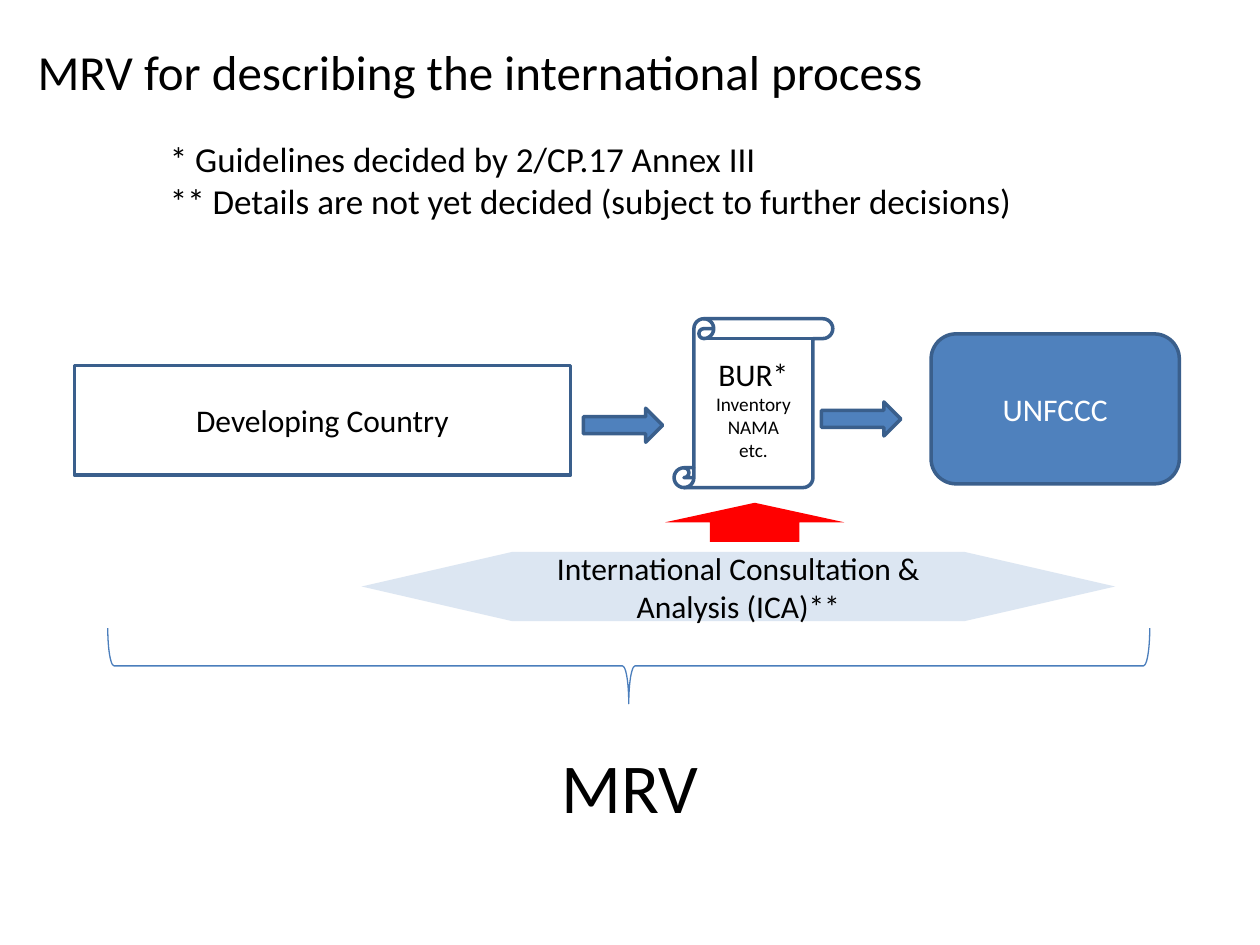
"""Build the slide on MRV in the international process."""
from pptx import Presentation
from pptx.dml.color import RGBColor
from pptx.enum import shapes, text
from pptx.util import Inches, Pt


class Theme:
    font = "Calibri"
    ink, white = "000000", "FFFFFF"
    blue, edge, brace = "4F81BD", "3A5F8C", "4B7EBC"
    pale, red = "DCE6F2", "FF0000"
    small, body, note, title, huge = 11, 18, 20, 28, 40
    thick, thin = 2, 0.75


deck = Presentation()
deck.slide_width, deck.slide_height = Inches(10), Inches(7.5)
col, row = deck.slide_width / 100, deck.slide_height / 75
slide = deck.slides.add_slide(deck.slide_layouts[6])
kind = shapes.MSO_SHAPE
center, left = text.PP_ALIGN.CENTER, text.PP_ALIGN.LEFT


def write(shape, lines, color=Theme.ink, align=center):
    frame = shape.text_frame
    frame.word_wrap = True
    frame.vertical_anchor = text.MSO_ANCHOR.MIDDLE
    for i, (words, size) in enumerate(lines):
        para = frame.add_paragraph() if i else frame.paragraphs[0]
        para.alignment = align
        run = para.add_run()
        run.text = words
        run.font.name, run.font.size = Theme.font, Pt(size)
        run.font.color.rgb = RGBColor.from_string(color)


def draw(form, x, y, wide, high, fill=None, line=None, weight=Theme.thick):
    shape = slide.shapes.add_shape(
        form, round(x * col), round(y * row), round(wide * col), round(high * row))
    shape.shadow.inherit = False
    if fill:
        shape.fill.solid()
        shape.fill.fore_color.rgb = RGBColor.from_string(fill)
    else:
        shape.fill.background()
    if line:
        shape.line.color.rgb = RGBColor.from_string(line)
        shape.line.width = Pt(weight)
    else:
        shape.line.fill.background()
    return shape


nation = draw(kind.RECTANGLE, 5.9, 29, 39.4, 8.7, line=Theme.edge)
write(nation, [("Developing Country", Theme.body)])

unit = draw(kind.ROUNDED_RECTANGLE, 73.9, 26.5, 19.7, 11.9, Theme.blue, Theme.edge)
write(unit, [("UNFCCC", Theme.body)], Theme.white)

scroll = draw(kind.VERTICAL_SCROLL, 53.5, 25.3, 12.6, 13.4, line=Theme.edge)
write(scroll, [("BUR*", Theme.body)]
      + [(item, Theme.small) for item in ("Inventory", "NAMA", "etc.")])

for x, y in ((46.3, 32.4), (65.2, 31.9)):
    draw(kind.RIGHT_ARROW, x, y, 6.3, 2.7, Theme.blue, Theme.edge)

draw(kind.UP_ARROW, 52.8, 39.9, 14.2, 3.1, Theme.red)
review = draw(kind.FLOWCHART_PREPARATION, 28.7, 43.8, 59.8, 5.5, Theme.pale)
write(review, [("International Consultation & Analysis (ICA)**", Theme.body)])

brace = draw(kind.RIGHT_BRACE, 46.9, 11.5, 6, 82.7, line=Theme.brace, weight=Theme.thin)
brace.rotation = 90

labels = (
    (30.3, 58, 39.4, center, [("MRV", Theme.huge)]),
    (2, 1.3, 80.3, left,
     [("MRV for describing the international process", Theme.title)]),
    (12.5, 9.9, 80.3, left,
     [("* Guidelines decided by 2/CP.17 Annex III", Theme.note),
      ("** Details are not yet decided (subject to further decisions)", Theme.note)]),
)
for x, y, wide, align, lines in labels:
    box = slide.shapes.add_textbox(
        round(x * col), round(y * row), round(wide * col), round(8.7 * row))
    write(box, lines, align=align)

deck.save("out.pptx")
